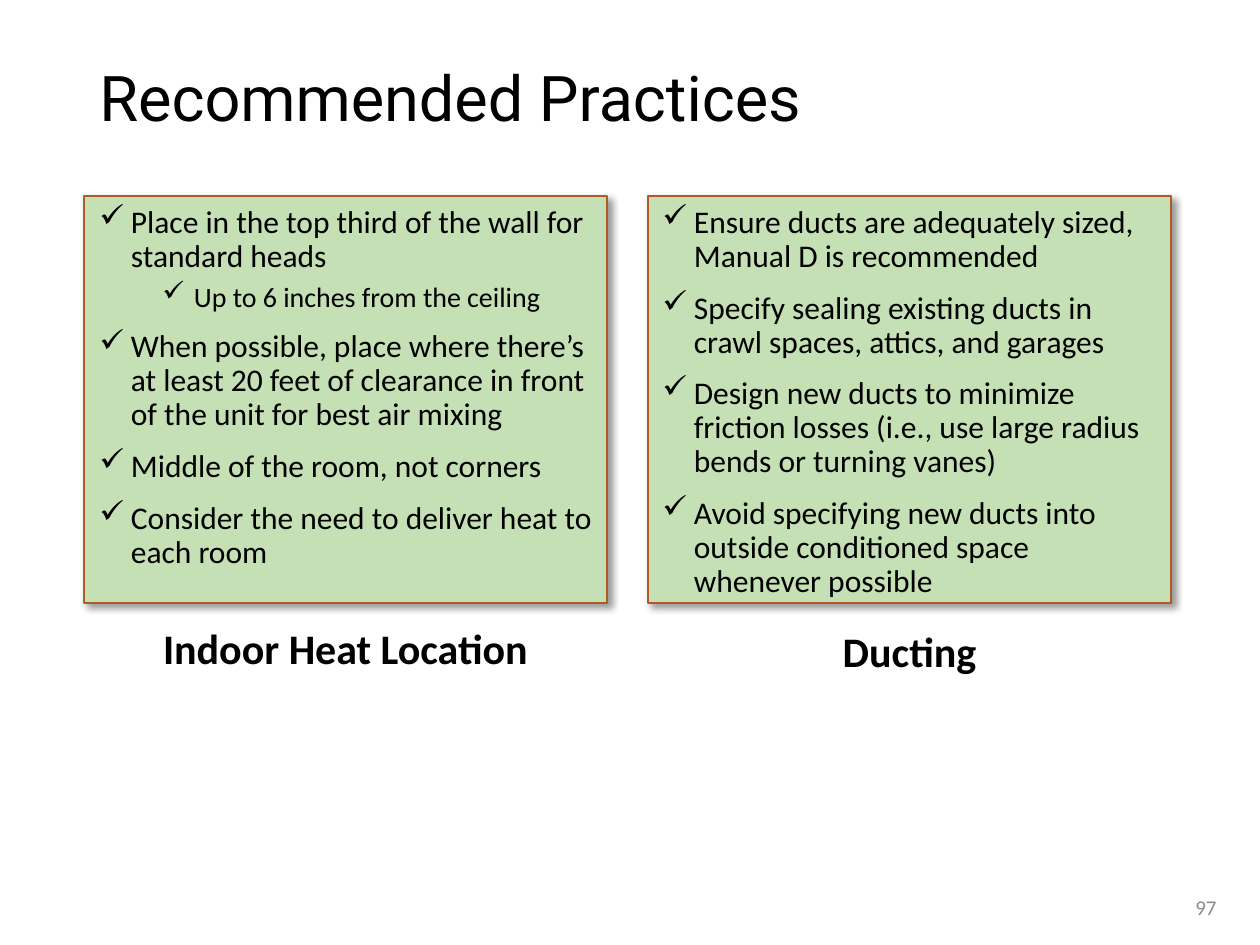
from lxml import etree
from pptx import Presentation
from pptx.dml.color import RGBColor
from pptx.enum.shapes import MSO_SHAPE as Shape
from pptx.enum.text import MSO_ANCHOR as Anchor, PP_ALIGN as Align
from pptx.oxml import parse_xml
from pptx.oxml.ns import nsdecls, qn
from pptx.util import Pt

PX = 914400 / 126  # EMU in one px


def color(code):
    return RGBColor.from_string(code)


def add_text(slide, box, lines, size, code="000000", font="Calibri", bold=False):
    frame = slide.shapes.add_textbox(*[round(v * PX) for v in box]).text_frame
    frame.word_wrap = True
    frame.text = "\n".join(lines)
    for para in frame.paragraphs:
        for run in para.runs:
            run.font.size = Pt(size)
            run.font.name = font
            run.font.bold = bold
            run.font.color.rgb = color(code)
    return frame


prs = Presentation()
prs.slide_width, prs.slide_height = round(1260 * PX), round(945 * PX)
slide = prs.slides.add_slide(prs.slide_layouts[6])

# Content: panel left, list box, caption box, caption, (level, text) items
columns = [
    (84, (87, 200, 536, 467), (103, 616, 485, 63), "Indoor Heat Location", [
        (0, "Place in the top third of the wall for standard heads"),
        (1, "Up to 6 inches from the ceiling"),
        (0, "When possible, place where there’s at least 20 feet of clearance "
            "in front of the unit for best air mixing"),
        (0, "Middle of the room, not corners"),
        (0, "Consider the need to deliver heat to each room"),
    ]),
    (648, (650, 200, 523, 650), (667, 619, 485, 63), "Ducting", [
        (0, "Ensure ducts are adequately sized, Manual D is recommended"),
        (0, "Specify sealing existing ducts in crawl spaces, attics, and garages"),
        (0, "Design new ducts to minimize friction losses "
            "(i.e., use large radius bends or turning vanes)"),
        (0, "Avoid specifying new ducts into outside conditioned space "
            "whenever possible"),
    ]),
]

# Title
title = add_text(slide, (87, 38, 1086, 126), ["Recommended Practices"], 36, font="Roboto")
title.vertical_anchor = Anchor.MIDDLE
title.paragraphs[0].line_spacing = 0.9

for left, area, foot, name, items in columns:
    # Green panel with a soft shadow
    panel = slide.shapes.add_shape(
        Shape.RECTANGLE, *[round(v * PX) for v in (left, 196, 523, 407)])
    panel.fill.solid()
    panel.fill.fore_color.rgb = color("C5E0B4")
    panel.line.color.rgb = color("AF5C24")
    panel.line.width = Pt(1)
    panel.shadow.inherit = False
    glow = panel._element.spPr.find(qn("a:effectLst"))
    glow.append(parse_xml(
        f'<a:outerShdw {nsdecls("a")} blurRad="{Pt(4)}" dist="{Pt(3)}" dir="2700000" '
        'algn="tl" rotWithShape="0"><a:srgbClr val="000000"><a:alpha val="40000"/>'
        '</a:srgbClr></a:outerShdw>'))

    # Check list
    body = add_text(slide, area, [text for _, text in items], 18)
    for num, (para, (level, _)) in enumerate(zip(body.paragraphs, items)):
        para.level = level
        para.line_spacing = 0.9
        para.space_before = Pt(0 if num == 0 else 5 if level else 10)
        para.runs[0].font.size = Pt(16 if level else 18)
        props = para._p.get_or_add_pPr()
        props.set("marL", str(round((94.5 if level else 31.5) * PX)))
        props.set("indent", str(round(-31.5 * PX)))
        etree.SubElement(props, qn("a:buChar")).set("char", "✓")

    # Caption
    label = add_text(slide, foot, [name], 24, bold=True)
    label.paragraphs[0].alignment = Align.CENTER

# Slide number
page = add_text(slide, (945, 882, 284, 50), ["97"], 12, "8C8C8C")
page.vertical_anchor = Anchor.MIDDLE
page.paragraphs[0].alignment = Align.RIGHT

prs.save("out.pptx")
